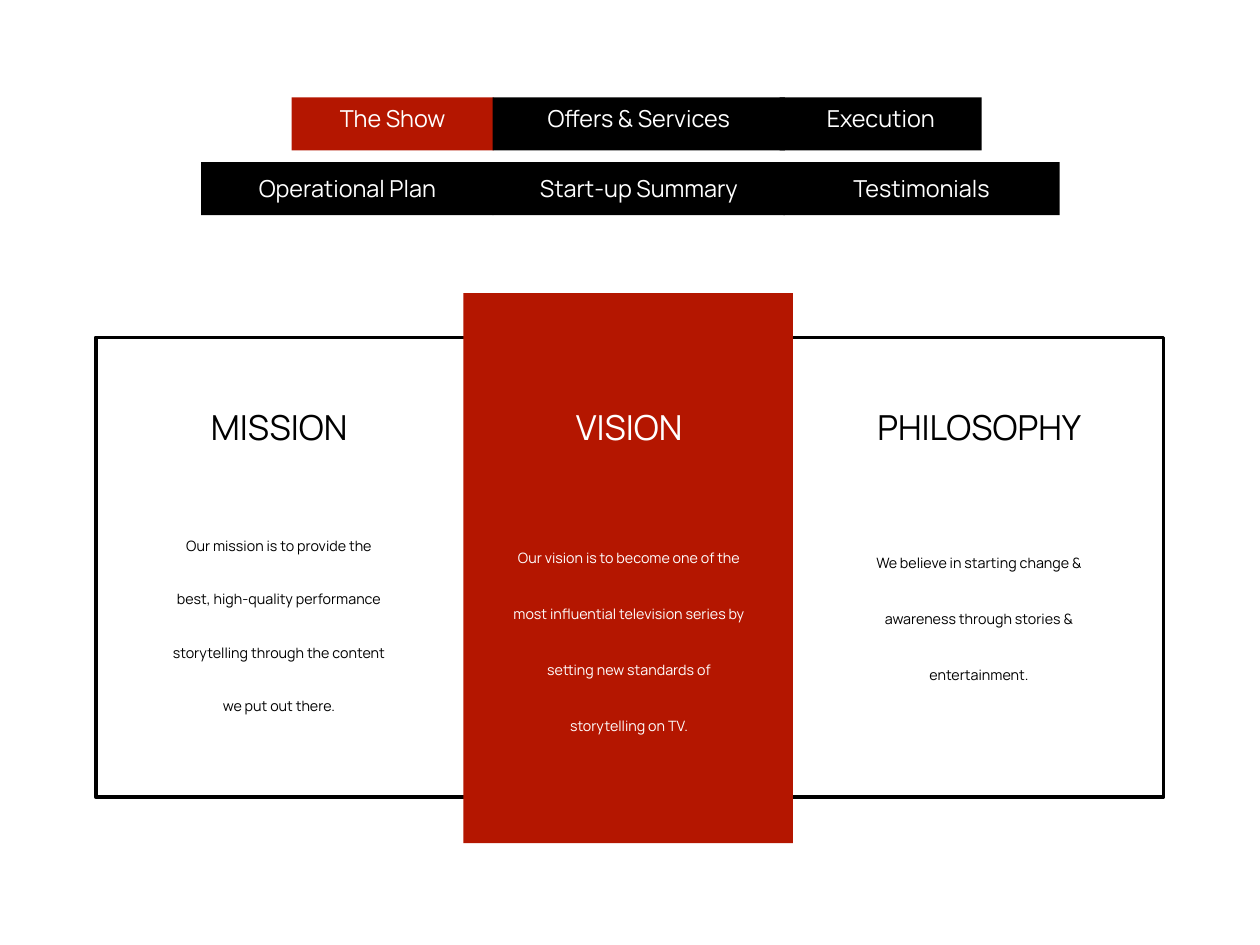
from dataclasses import dataclass

from pptx import Presentation
from pptx import util as u
from pptx.dml.color import RGBColor
from pptx.enum import shapes, text

CELL = u.Inches(0.1)
COLUMNS, ROWS = 142.2, 106.7
RED, BLACK, WHITE = "B41600", "000000", "FFFFFF"
TAB_HEIGHT, LABEL_HEIGHT, HEADING_TOP = 6, 5.9, 45.2
FIRST_CENTRE, PANEL_PITCH = 31.5, 39.5
MIDDLE, TOP = text.MSO_ANCHOR.MIDDLE, text.MSO_ANCHOR.TOP


@dataclass
class Area:
    column: float
    row: float
    columns: float
    rows: float

    def edges(self) -> list[int]:
        return [round(n * CELL) for n in (self.column, self.row, self.columns, self.rows)]


@dataclass
class Tab:
    label: str
    column: float
    columns: float
    label_columns: float
    fill: str = BLACK


@dataclass
class TabRow:
    row: float
    label_row: float
    tabs: list[Tab]


@dataclass
class Panel:
    heading: str
    heading_columns: float
    body: str
    body_row: float
    body_columns: float
    body_rows: float
    spacing: float = 1.9
    anchor: text.MSO_ANCHOR = MIDDLE
    colour: str = BLACK


TAB_ROWS = [
    TabRow(11, 10.4, [
        Tab("The Show", 32.9, 22.8, 16.1, RED),
        Tab("Execution", 88, 22.8, 17.2),
        Tab("Offers & Services", 55.6, 33, 28.4),
    ]),
    TabRow(18.3, 18.3, [
        Tab("Operational Plan", 22.7, 33, 26.5),
        Tab("Testimonials", 88.4, 31.2, 26.5),
        Tab("Start-up Summary", 55.6, 33, 26.5),
    ]),
]

PANELS = [
    Panel("MISSION", 16.4,
          "Our mission is to provide the best, high-quality performance "
          "storytelling through the content we put out there.",
          57.4, 25.4, 27.2, spacing=1.8, anchor=TOP),
    Panel("VISION", 13.4,
          "Our vision is to become one of the most influential television series "
          "by setting new standards of storytelling on TV.",
          58.1, 27.3, 26.4, colour=WHITE),
    Panel("PHILOSOPHY", 24.2,
          "We believe in starting change & awareness through stories & entertainment.",
          58.2, 25.4, 21.1),
]


def colour_of(value: str) -> RGBColor:
    return RGBColor.from_string(value)


def apply(target: object, formats: dict) -> None:
    for name, value in formats.items():
        setattr(target, name, value)


def add_block(page, area: Area, fill: str | None = None, line: str | None = None) -> None:
    block = page.shapes.add_shape(shapes.MSO_SHAPE.RECTANGLE, *area.edges())
    block.shadow.inherit = False
    if fill:
        block.fill.solid()
        block.fill.fore_color.rgb = colour_of(fill)
    else:
        block.fill.background()
    if line:
        block.line.color.rgb = colour_of(line)
        block.line.width = u.Pt(3)
    else:
        block.line.fill.background()


def add_text(page, centre: float, row: float, columns: float, rows: float,
             words: str, size: float, colour: str, anchor: text.MSO_ANCHOR = MIDDLE,
             spacing: float = 1.0, raised: bool = False) -> None:
    area = Area(centre - columns / 2, row, columns, rows)
    box = page.shapes.add_textbox(*area.edges())
    margins = {f"margin_{side}": u.Inches(0.03) for side in ("left", "top", "right", "bottom")}
    apply(box.text_frame, {"word_wrap": True, "vertical_anchor": anchor, **margins})
    para = box.text_frame.paragraphs[0]
    apply(para, {"alignment": text.PP_ALIGN.CENTER, "line_spacing": spacing})
    span = para.add_run()
    span.text = words
    apply(span.font, {"name": "Manrope", "size": u.Pt(size)})
    span.font.color.rgb = colour_of(colour)
    if raised:
        span.font._element.set("baseline", "30000")


def add_tab_row(page, tab_row: TabRow) -> None:
    for tab in tab_row.tabs:
        add_block(page, Area(tab.column, tab_row.row, tab.columns, TAB_HEIGHT), fill=tab.fill)
    for tab in tab_row.tabs:
        add_text(page, tab.column + tab.columns / 2, tab_row.label_row,
                 tab.label_columns, LABEL_HEIGHT, tab.label, 19, WHITE)


def add_panel(page, panel: Panel, centre: float) -> None:
    add_text(page, centre, HEADING_TOP, panel.heading_columns, 6,
             panel.heading, 28, panel.colour)
    add_text(page, centre, panel.body_row, panel.body_columns, panel.body_rows,
             panel.body, 20, panel.colour, panel.anchor, panel.spacing, raised=True)


def main() -> None:
    deck = Presentation()
    apply(deck, {"slide_width": round(COLUMNS * CELL), "slide_height": round(ROWS * CELL)})
    page = deck.slides.add_slide(deck.slide_layouts[6])
    add_block(page, Area(10.8, 38.1, 120.5, 51.9), line=BLACK)
    add_block(page, Area(52.3, 33.1, 37.2, 62.1), fill=RED)
    for tab_row in TAB_ROWS:
        add_tab_row(page, tab_row)
    for index, panel in enumerate(PANELS):
        add_panel(page, panel, FIRST_CENTRE + index * PANEL_PITCH)
    deck.save("out.pptx")


if __name__ == "__main__":
    main()
